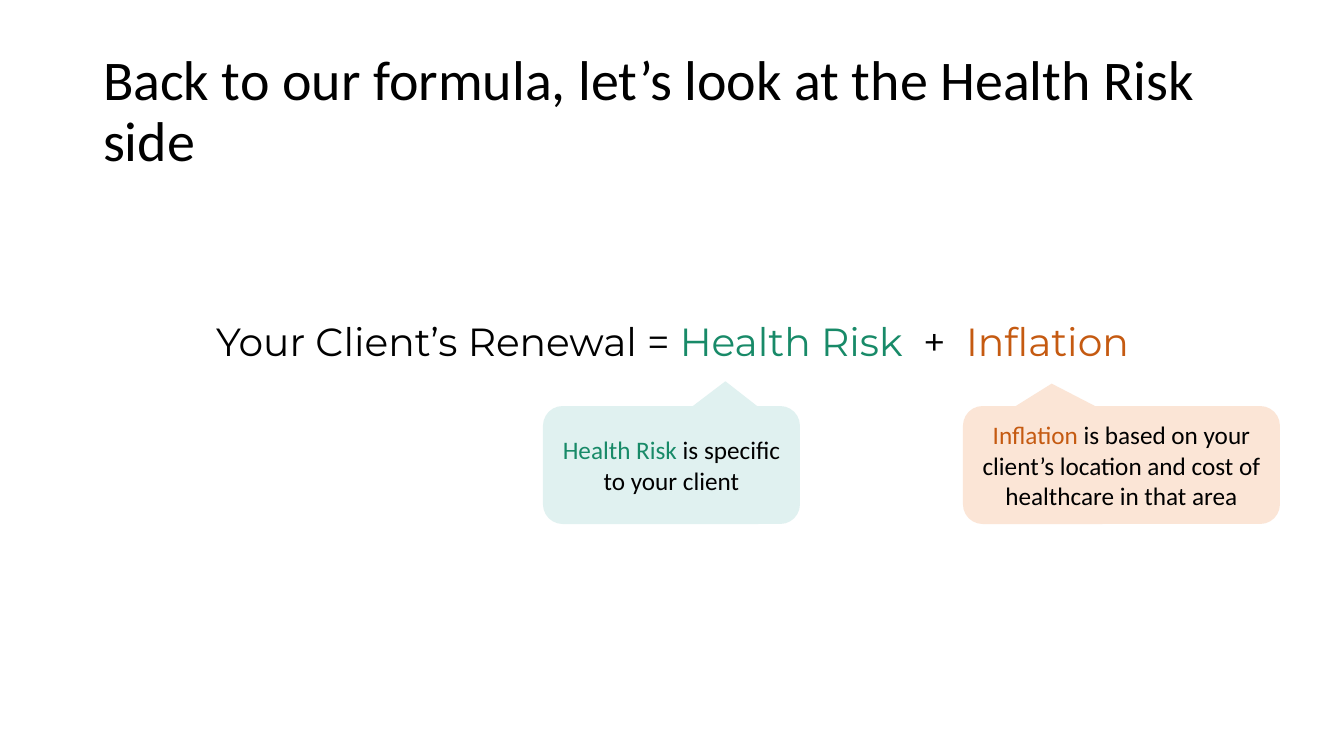
from pptx import Presentation
from pptx.dml.color import RGBColor
from pptx.enum.shapes import MSO_SHAPE as Shape
from pptx.enum.text import MSO_ANCHOR as Anchor, MSO_AUTO_SIZE as Auto, PP_ALIGN as Align
from pptx.util import Emu, Pt

SCALE = 914400 / 100.8
BLACK, GREEN, RUST = "000000", "188A68", "C55A11"
MINT, PEACH = "E0F1F0", "FBE5D6"


def px(num):
    return Emu(round(num * SCALE))


def color(code):
    return RGBColor.from_string(code)


def apply(item, form):
    for name, value in form.items():
        setattr(item, name, value)


def place(item, box):
    apply(item, dict(zip(("left", "top", "width", "height"), map(px, box))))


def write(item, runs, face, size, anchor, form):
    frame = item.text_frame
    apply(frame, {"word_wrap": True, "auto_size": Auto.NONE, "vertical_anchor": anchor})
    para = frame.paragraphs[0]
    apply(para, form)
    for text, code in runs:
        run = para.add_run()
        run.text = text
        apply(run.font, {"name": face, "size": Pt(size)})
        run.font.color.rgb = color(code)


def title(slide, box, text):
    head = slide.shapes.title
    place(head, box)
    form = {"alignment": Align.LEFT, "line_spacing": 0.9}
    write(head, [(text, BLACK)], "Calibri", 40, Anchor.MIDDLE, form)


def formula(slide, box, runs):
    item = slide.shapes.add_textbox(*map(px, box))
    form = {"alignment": Align.CENTER, "space_before": Pt(10)}
    write(item, runs, "Montserrat", 28, Anchor.TOP, form)


def callout(slide, box, tip, fill, runs):
    item = slide.shapes.add_shape(Shape.ROUNDED_RECTANGULAR_CALLOUT, *map(px, box))
    for pos, value in enumerate((*tip, 0.167)):
        item.adjustments[pos] = value
    item.shadow.inherit = False
    item.fill.solid()
    item.fill.fore_color.rgb = color(fill)
    item.line.fill.background()
    write(item, runs, "Calibri", 18, Anchor.MIDDLE, {"alignment": Align.CENTER})


def main():
    deck = Presentation()
    apply(deck, {"slide_width": px(1344), "slide_height": px(756)})
    slide = deck.slides.add_slide(deck.slide_layouts.get_by_name("Title Only"))
    title(slide, (93, 40, 1159, 146), "Back to our formula, let’s look at the Health Risk side")
    formula(slide, (93, 312, 1159, 87), [
        ("Your Client’s Renewal = ", BLACK),
        ("Health Risk  ", GREEN),
        ("+  ", BLACK),
        ("Inflation", RUST),
    ])
    callout(slide, (543, 406, 257, 118), (0.21, -0.71), MINT, [
        ("Health Risk ", GREEN),
        ("is specific to your client", BLACK),
    ])
    callout(slide, (963, 406, 317, 118), (-0.22, -0.69), PEACH, [
        ("Inflation ", RUST),
        ("is based on your client’s location and cost of healthcare in that area", BLACK),
    ])
    deck.save("out.pptx")


if __name__ == "__main__":
    main()
